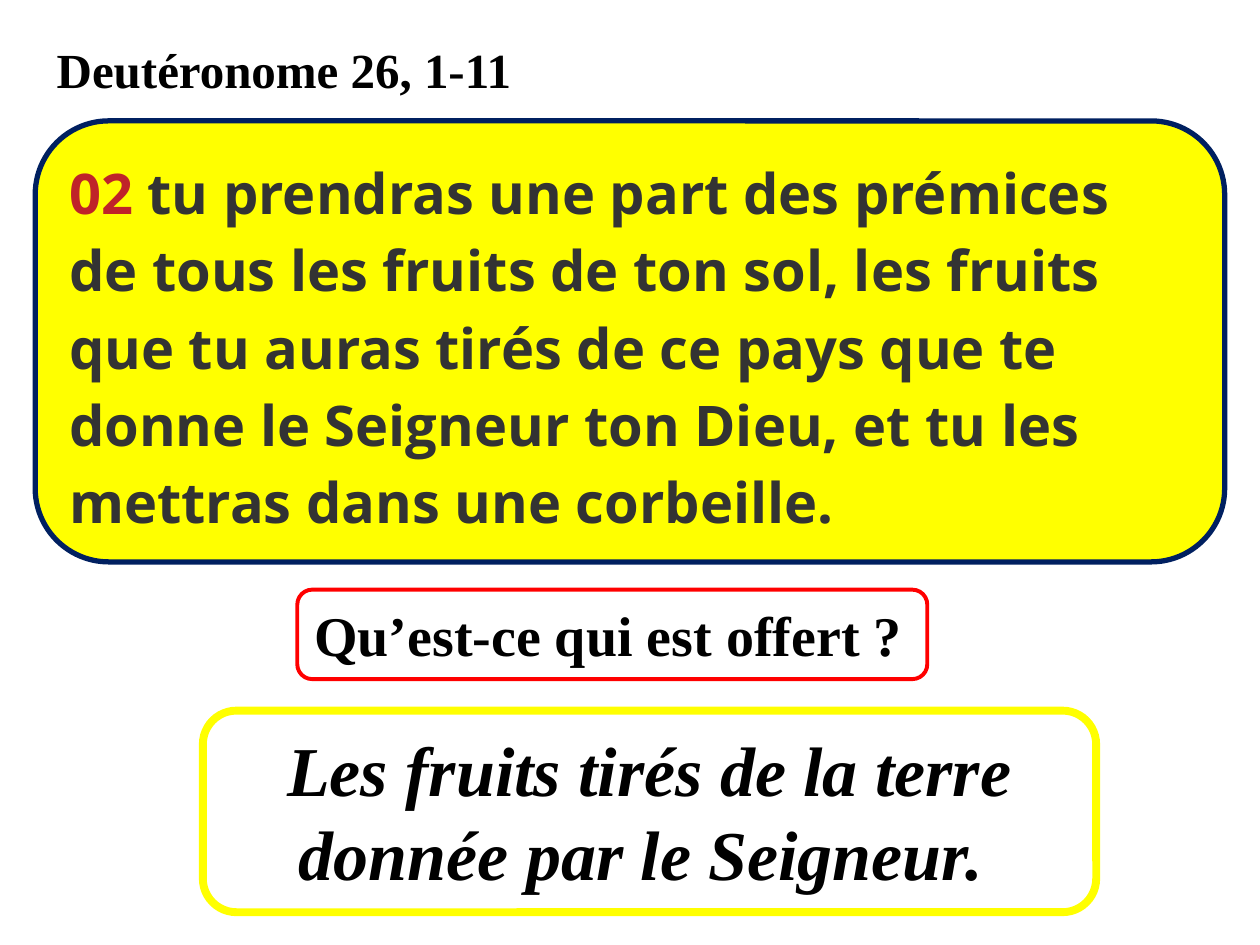
from pptx import Presentation
from pptx.dml.color import RGBColor
from pptx.enum.shapes import MSO_SHAPE as SHAPE
from pptx.enum.text import MSO_ANCHOR as ANCHOR, MSO_AUTO_SIZE as AUTO, PP_ALIGN as ALIGN
from pptx.util import Inches, Pt

COLORS = {
    "black": "000000",
    "yellow": "FFFF00",
    "navy": "002060",
    "red": "FF0000",
    "verse": "BF2329",
    "body": "333333",
}
SERIF, SANS = "Times New Roman", "Open Sans"


class ReadingSlide:
    """Style and current slide of a Bible reading with a question and answer."""

    def __init__(self, prs):
        self.slide = prs.slides.add_slide(prs.slide_layouts[5])

    def color(self, name):
        return RGBColor.from_string(COLORS[name])

    def add_text(self, sp, runs, size, font=SERIF, align=ALIGN.LEFT, italic=None):
        tf = sp.text_frame
        tf.word_wrap = True
        tf.auto_size = AUTO.NONE
        tf.vertical_anchor = ANCHOR.TOP
        p = tf.paragraphs[0]
        p.alignment = align
        for text, color in runs:
            r = p.add_run()
            r.text = text
            r.font.name = font
            r.font.size = Pt(size)
            r.font.bold = True
            r.font.italic = italic
            r.font.color.rgb = self.color(color)
        return p

    def title(self, box, text):
        sp = self.slide.shapes.title
        sp.left, sp.top, sp.width, sp.height = map(Inches, box)
        self.add_text(sp, [(text, "black")], 28)

    def panel(self, box, line, weight, fill=None):
        sp = self.slide.shapes.add_shape(SHAPE.ROUNDED_RECTANGLE, *map(Inches, box))
        sp.shadow.inherit = False
        if fill:
            sp.fill.solid()
            sp.fill.fore_color.rgb = self.color(fill)
        else:
            sp.fill.background()
        sp.line.color.rgb = self.color(line)
        sp.line.width = Pt(weight)
        return sp


def main():
    prs = Presentation()
    prs.slide_width, prs.slide_height = Inches(10), Inches(7.5)
    s = ReadingSlide(prs)

    s.title((0.35, 0.26, 4.02, 0.57), "Deutéronome 26, 1-11")

    question = s.panel((2.36, 4.68, 5, 0.71), "red", 2.25)
    s.add_text(question, [("Qu’est-ce qui est offert ?", "black")], 32)

    verse = s.panel((0.28, 0.96, 9.44, 3.5), "navy", 3, fill="yellow")
    p = s.add_text(verse, [
        ("02", "verse"),
        (" tu prendras une part des prémices de tous les fruits de ton sol, "
         "les fruits que tu auras tirés de ce pays que te donne le Seigneur "
         "ton Dieu, et tu les mettras dans une corbeille.", "body"),
    ], 32, font=SANS)
    p.line_spacing = 1.15
    p.space_after = Pt(10)

    answer = s.panel((1.61, 5.64, 7.09, 1.6), "yellow", 4.5)
    s.add_text(answer, [("Les fruits tirés de la terre donnée par le Seigneur. ", "black")],
               40, align=ALIGN.CENTER, italic=True)

    prs.save("out.pptx")


if __name__ == "__main__":
    main()
